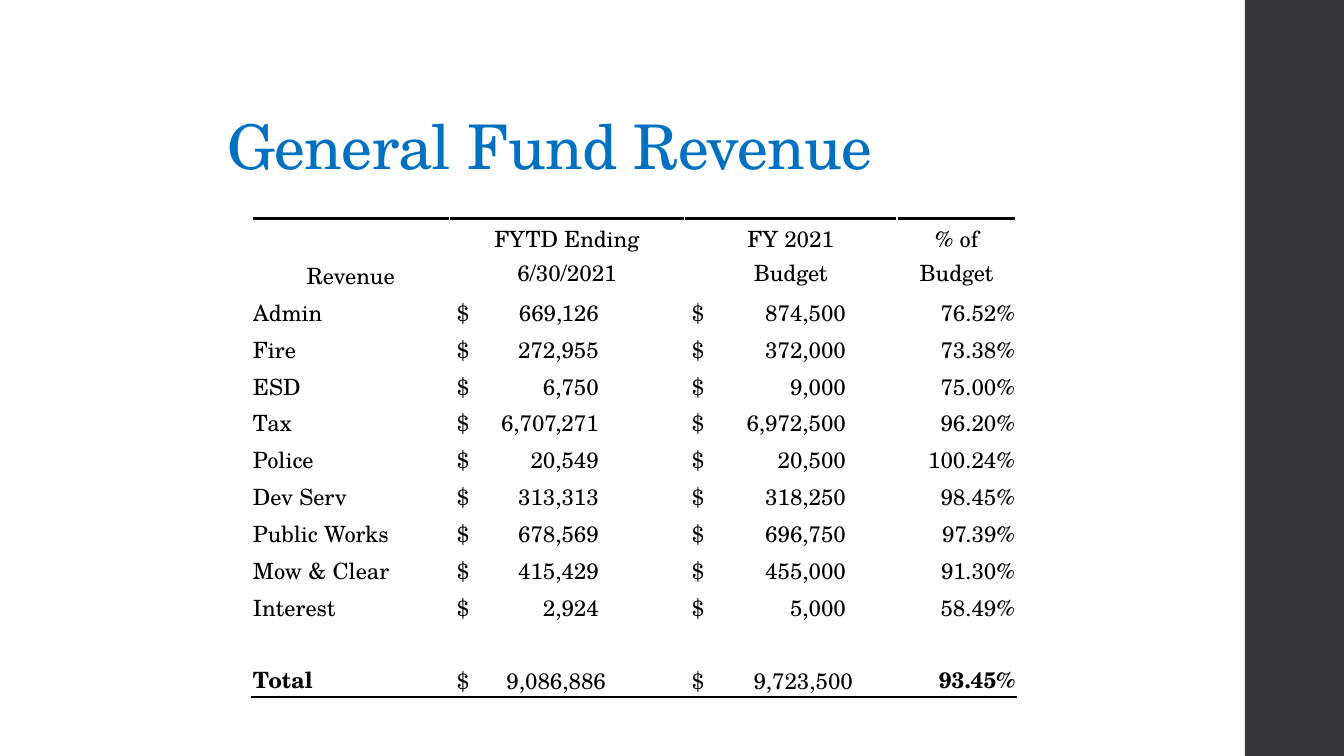
from lxml import etree
from pptx import Presentation
from pptx.dml.color import RGBColor
from pptx.enum.shapes import MSO_SHAPE
from pptx.enum.text import MSO_ANCHOR, PP_ALIGN
from pptx.oxml.ns import qn
from pptx.util import Pt

RECTANGLE = MSO_SHAPE.RECTANGLE
TOP, BOTTOM = MSO_ANCHOR.TOP, MSO_ANCHOR.BOTTOM
LEFT, CENTER, RIGHT = PP_ALIGN.LEFT, PP_ALIGN.CENTER, PP_ALIGN.RIGHT

FONT = "TeX Gyre Schola"
COLORS = {"paper": "FFFFFF", "ink": "000000", "title": "0070C0", "sidebar": "353537"}

HEADERS = [
    ["", "FYTD Ending", "FY 2021", "% of"],
    ["Revenue", "6/30/2021", "Budget", "Budget"],
]
REVENUES = [
    ["Admin", "669,126", "874,500", "76.52%"],
    ["Fire", "272,955", "372,000", "73.38%"],
    ["ESD", "6,750", "9,000", "75.00%"],
    ["Tax", "6,707,271", "6,972,500", "96.20%"],
    ["Police", "20,549", "20,500", "100.24%"],
    ["Dev Serv", "313,313", "318,250", "98.45%"],
    ["Public Works", "678,569", "696,750", "97.39%"],
    ["Mow & Clear", "415,429", "455,000", "91.30%"],
    ["Interest", "2,924", "5,000", "58.49%"],
]
TOTAL = ["Total", "9,086,886", "9,723,500", "93.45%"]

COLUMN_WIDTHS = [141.1, 167.8, 151.9, 85]
ROW_HEIGHT = 26.32
CELL_INSET = 0.72
MONEY_INSET = 5.3
AMOUNT_TABS = {1: 101.4, 2: 110.1}  # right edge of the amounts, by column
TOTAL_SHIFT = 5  # the total amounts stand a little further right


def rgb(name):
    return RGBColor.from_string(COLORS[name])


def write(frame, text, size=16, color="ink", bold=False, align=LEFT,
          line_spacing=None, tracking=None, tab=None):
    paragraph = frame.paragraphs[0]
    paragraph.alignment = align
    if line_spacing:
        paragraph.line_spacing = line_spacing
    if tab:
        properties = paragraph._p.get_or_add_pPr()
        tabs = etree.SubElement(properties, qn("a:tabLst"))
        etree.SubElement(tabs, qn("a:tab"), pos=str(Pt(tab)), algn="r")
    run = paragraph.add_run()
    run.text = text
    run.font.name = FONT
    run.font.size = Pt(size)
    run.font.bold = bold
    run.font.color.rgb = rgb(color)
    if tracking:
        run.font._element.set("spc", str(round(tracking * 100)))


class RevenueSlide:
    def __init__(self, presentation):
        self.slide = presentation.slides.add_slide(presentation.slide_layouts[6])
        self.slide.background.fill.solid()
        self.slide.background.fill.fore_color.rgb = rgb("paper")

    def bar(self, left, top, width, height, color):
        shape = self.slide.shapes.add_shape(
            RECTANGLE, Pt(left), Pt(top), Pt(width), Pt(height))
        shape.shadow.inherit = False
        shape.fill.solid()
        shape.fill.fore_color.rgb = rgb(color)
        shape.line.fill.background()

    def title(self, text, left, top, width, height):
        frame = self.slide.shapes.add_textbox(
            Pt(left), Pt(top), Pt(width), Pt(height)).text_frame
        frame.word_wrap = True
        frame.vertical_anchor = BOTTOM
        write(frame, text, size=44, color="title", line_spacing=0.9, tracking=-0.5)

    def table(self, left, top, row_count):
        shape = self.slide.shapes.add_table(
            row_count, len(COLUMN_WIDTHS), Pt(left), Pt(top),
            Pt(sum(COLUMN_WIDTHS)), Pt(ROW_HEIGHT * row_count))
        table = shape.table
        table.first_row = table.horz_banding = False
        for column, width in zip(table.columns, COLUMN_WIDTHS):
            column.width = Pt(width)
        for row in table.rows:
            row.height = Pt(ROW_HEIGHT)
        for cell in table.iter_cells():
            cell.fill.solid()
            cell.fill.fore_color.rgb = rgb("paper")
            cell.margin_left = cell.margin_right = cell.margin_top = Pt(CELL_INSET)
            cell.margin_bottom = 0
            cell.vertical_anchor = BOTTOM
        return table

    def rule(self, cell, side, width=2):
        line = etree.Element(qn(f"a:{side}"), w=str(Pt(width)))
        fill = etree.SubElement(line, qn("a:solidFill"))
        etree.SubElement(fill, qn("a:srgbClr"), val=COLORS["ink"])
        cell._tc.get_or_add_tcPr().insert(0, line)

    def money(self, cell, amount, tab):
        cell.margin_left = Pt(MONEY_INSET)
        write(cell.text_frame, f"$\t{amount}", tab=tab)

    def revenue_row(self, table, row, values, shift=0, bold=False):
        for column, value in enumerate(values):
            cell = table.cell(row, column)
            if column in AMOUNT_TABS:
                self.money(cell, value, AMOUNT_TABS[column] + shift)
            else:
                write(cell.text_frame, value, bold=bold,
                      align=RIGHT if column == 3 else LEFT)


def main():
    presentation = Presentation()
    presentation.slide_width, presentation.slide_height = Pt(960), Pt(540)
    page = RevenueSlide(presentation)

    # Sidebar and title
    page.bar(889.2, 0, 70.8, 540, "sidebar")
    page.title("General Fund Revenue", 155.5, 59.8, 572.4, 74.2)

    # Table headers
    last_row = len(HEADERS) + len(REVENUES) + 1
    table = page.table(180, 156, last_row + 1)
    for row, labels in enumerate(HEADERS):
        for column, label in enumerate(labels):
            cell = table.cell(row, column)
            if label:
                write(cell.text_frame, label, align=CENTER)
            if row == 1 and column > 0:
                cell.vertical_anchor = TOP

    # Revenue rows, then the total after an empty row
    for row, values in enumerate(REVENUES, start=len(HEADERS)):
        page.revenue_row(table, row, values)
    page.revenue_row(table, last_row, TOTAL, shift=TOTAL_SHIFT, bold=True)

    # Rules above and below the table
    for column in range(len(COLUMN_WIDTHS)):
        page.rule(table.cell(0, column), "lnT")
        page.rule(table.cell(last_row, column), "lnB")

    presentation.save("out.pptx")


if __name__ == "__main__":
    main()
